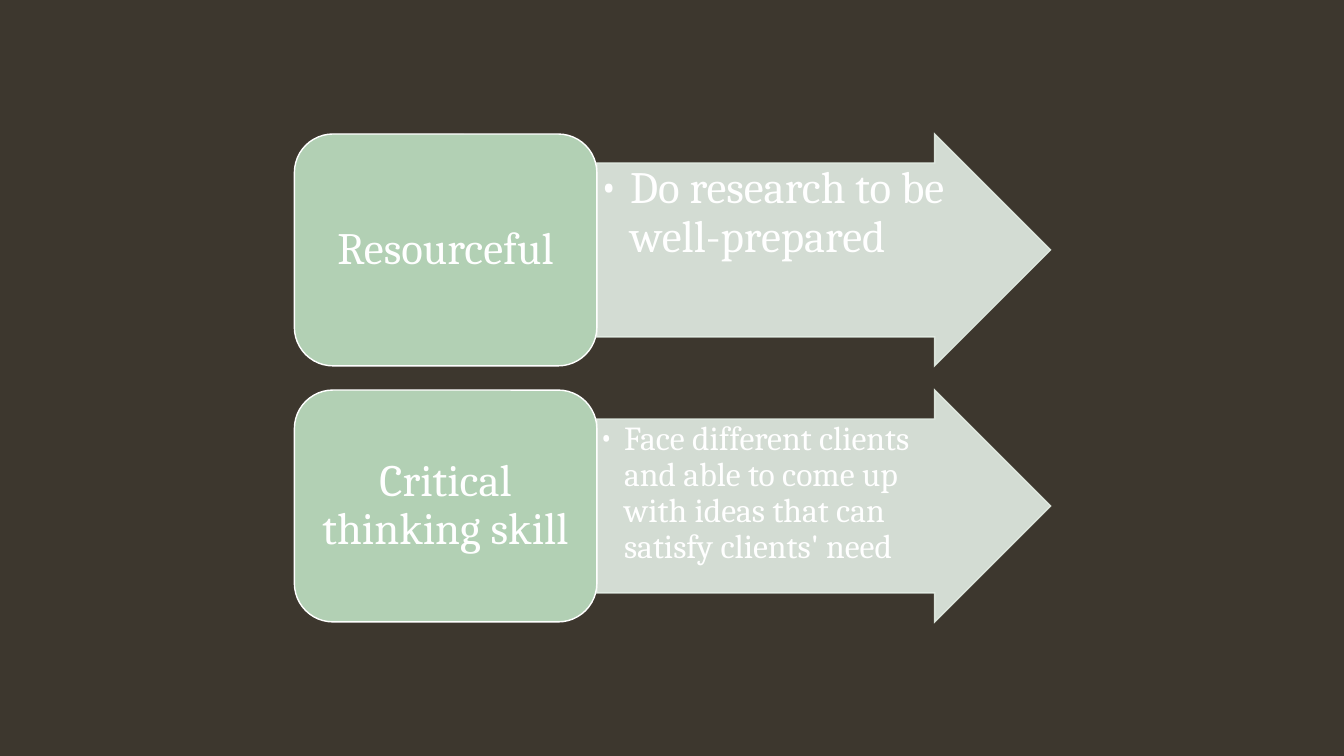
from lxml import etree
from pptx import Presentation
from pptx.dml.color import RGBColor
from pptx.enum.shapes import MSO_SHAPE
from pptx.enum.text import MSO_ANCHOR, PP_ALIGN
from pptx.oxml.ns import qn
from pptx.util import Inches, Pt

ARROW, CARD = MSO_SHAPE.RIGHT_ARROW, MSO_SHAPE.ROUNDED_RECTANGLE
TOP, MIDDLE = MSO_ANCHOR.TOP, MSO_ANCHOR.MIDDLE
LEFT, CENTER = PP_ALIGN.LEFT, PP_ALIGN.CENTER
COLORS = {"background": "3D372E", "arrow": "E4EEE5", "card": "B2D0B4", "white": "FFFFFF"}
FONT = "Cambria"

# Skill, detail, detail size (pt), bullet indent (in)
SKILLS = [
    ("Resourceful", "Do research to be well-prepared", 32, 0.31),
    ("Critical thinking skill",
     "Face different clients and able to come up with ideas that can satisfy clients' need",
     24, 0.25),
]
CARD_LEFT, CARD_W, ARROW_W = 2.92, 3, 4.5
ROW_TOP, ROW_H, ROW_STEP = 1.33, 2.3, 2.54


def add_block(kind, x, y, w, fill, line, text, size, anchor, align, insets):
    sp = s.shapes.add_shape(kind, Inches(x), Inches(y), Inches(w), Inches(ROW_H))
    sp.shadow.inherit = False
    sp.fill.solid()
    sp.fill.fore_color.rgb = RGBColor.from_string(COLORS[fill])
    sp.line.color.rgb = RGBColor.from_string(COLORS[line])
    sp.line.width = Pt(1)
    tf = sp.text_frame
    tf.word_wrap = True
    tf.vertical_anchor = anchor
    tf.margin_left, tf.margin_top, tf.margin_right, tf.margin_bottom = map(Inches, insets)
    p = tf.paragraphs[0]
    p.text = text
    p.alignment = align
    p.line_spacing = 0.9
    p.font.name = FONT
    p.font.size = Pt(size)
    p.font.color.rgb = RGBColor.from_string(COLORS["white"])
    return sp


prs = Presentation()
prs.slide_width, prs.slide_height = Inches(13.33), Inches(7.5)
s = prs.slides.add_slide(prs.slide_layouts[6])
s.background.fill.solid()
s.background.fill.fore_color.rgb = RGBColor.from_string(COLORS["background"])

for i, (skill, detail, size, indent) in enumerate(SKILLS):
    y = ROW_TOP + i * ROW_STEP

    # Translucent arrow with sharp corners and the detail
    arrow = add_block(ARROW, CARD_LEFT + CARD_W, y, ARROW_W, "arrow", "arrow",
                      detail, size, TOP, LEFT, (0.02, 0.02, 0.02, 0.02))
    arrow.adjustments[0], arrow.adjustments[1] = 0.75, 0.5
    spPr = arrow._element.spPr
    for color in spPr.iter(qn("a:srgbClr")):
        etree.SubElement(color, qn("a:alpha"), val="90000")
    etree.SubElement(spPr.find(qn("a:ln")), qn("a:miter"), lim="800000")

    # Bullet with hanging indent
    pPr = arrow.text_frame.paragraphs[0]._p.get_or_add_pPr()
    pPr.set("marL", str(Inches(indent)))
    pPr.set("indent", str(-Inches(indent)))
    bullet_font = etree.Element(qn("a:buFont"), typeface=FONT)
    pPr.find(qn("a:lnSpc")).addnext(bullet_font)
    bullet_font.addnext(etree.Element(qn("a:buChar"), char="•"))

    # Card with the skill
    add_block(CARD, CARD_LEFT, y, CARD_W, "card", "white",
              skill, 32, MIDDLE, CENTER, (0.13, 0.07, 0.13, 0.07))

prs.save("out.pptx")
